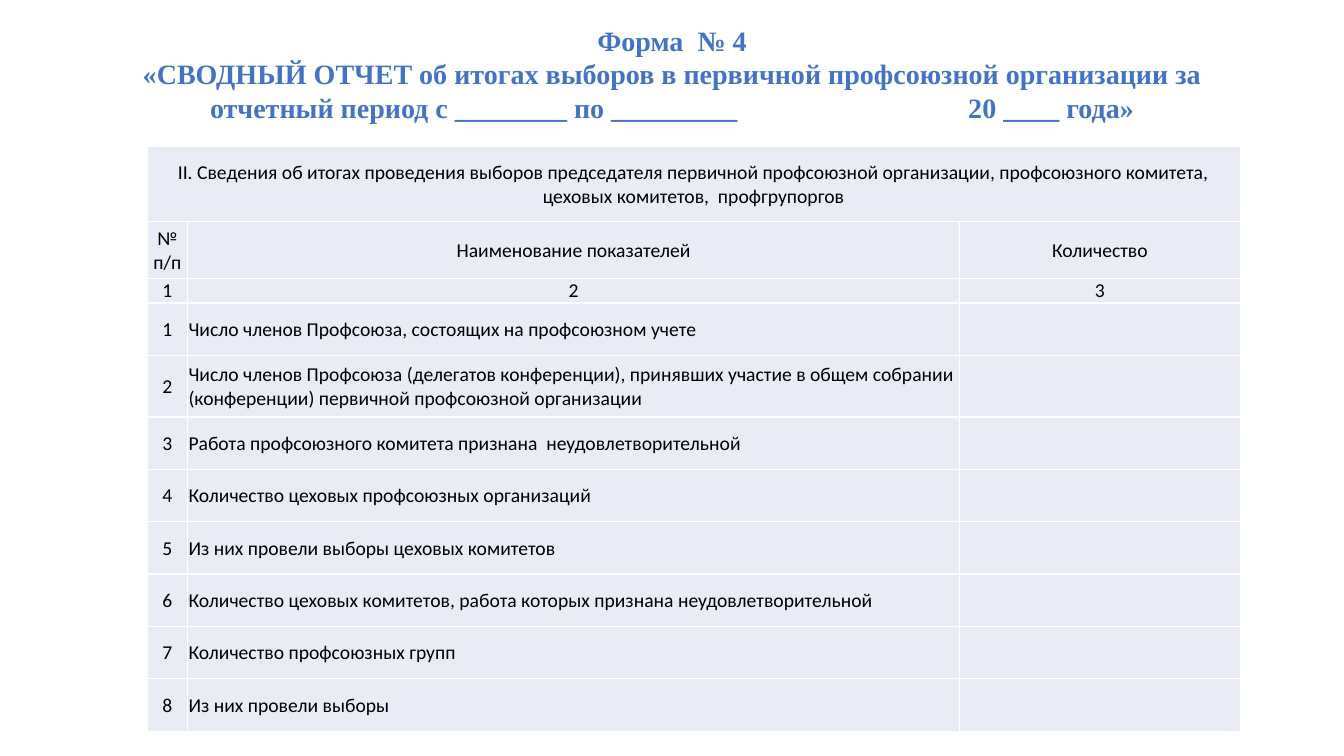
"""Build the slide with form No. 4, the summary report on trade union elections."""
import dataclasses

import lxml.etree
import pptx
import pptx.dml.color
import pptx.enum.text
import pptx.oxml.ns
import pptx.util

TITLE = [
    "Форма  № 4",
    "«СВОДНЫЙ ОТЧЕТ об итогах выборов в первичной профсоюзной организации за "
    "отчетный период с ________ по _________\t20 ____ года»",
]
SECTION = (
    "II. Сведения об итогах проведения выборов председателя первичной профсоюзной "
    "организации, профсоюзного комитета, цеховых комитетов,  профгрупоргов"
)
HEADINGS = ["№ п/п", "Наименование показателей", "Количество"]
INDICATORS = [
    "Число членов Профсоюза, состоящих на профсоюзном учете",
    "Число членов Профсоюза (делегатов конференции), принявших участие в общем "
    "собрании (конференции) первичной профсоюзной организации",
    "Работа профсоюзного комитета признана  неудовлетворительной",
    "Количество цеховых профсоюзных организаций",
    "Из них провели выборы цеховых комитетов",
    "Количество цеховых комитетов, работа которых признана неудовлетворительной",
    "Количество профсоюзных групп",
    "Из них провели выборы",
]

SLIDE_SIZE = (13.33, 7.5)
TITLE_BOX = (1.12, 0.18, 11.09, 1.11)
YEAR_TAB = 7.52
TABLE_ORIGIN = (1.46, 1.45)
COLUMN_WIDTHS = [0.4, 7.66, 2.78]
HEADER_HEIGHTS = [0.75, 0.56, 0.24]
INDICATOR_HEIGHT = 0.52
TWO_LINE_HEIGHT = 0.61
LONG_TEXT = 100
CELL_MARGIN = 0.01


@dataclasses.dataclass(frozen=True)
class Theme:
    title_font: str = "Times New Roman"
    title_size: int = 20
    title_color: str = "4472C4"
    table_font: str = "Calibri"
    table_size: int = 14
    table_color: str = "000000"
    cell_fill: str = "E9EBF5"
    border_color: str = "FFFFFF"
    border_width: int = 1


THEME = Theme()
INCH = pptx.util.Inches
ALIGN = pptx.enum.text.PP_ALIGN
qn = pptx.oxml.ns.qn


def rgb(color):
    return pptx.dml.color.RGBColor.from_string(color)


def style_font(font, name, size, color, bold=False):
    font.name = name
    font.size = pptx.util.Pt(size)
    font.color.rgb = rgb(color)
    font.bold = bold


def add_tab_stop(paragraph, position):
    properties = paragraph._p.get_or_add_pPr()
    tabs = lxml.etree.SubElement(properties, qn("a:tabLst"))
    lxml.etree.SubElement(tabs, qn("a:tab"), pos=str(INCH(position)), algn="l")


def add_title(slide):
    shape = slide.shapes.add_textbox(*map(INCH, TITLE_BOX))
    frame = shape.text_frame
    frame.word_wrap = True
    frame.auto_size = pptx.enum.text.MSO_AUTO_SIZE.SHAPE_TO_FIT_TEXT
    for index, line in enumerate(TITLE):
        paragraph = frame.add_paragraph() if index else frame.paragraphs[0]
        paragraph.alignment = ALIGN.CENTER
        if "\t" in line:
            add_tab_stop(paragraph, YEAR_TAB)
        run = paragraph.add_run()
        run.text = line
        style_font(run.font, THEME.title_font, THEME.title_size, THEME.title_color, True)


def add_borders(cell):
    properties = cell._tc.get_or_add_tcPr()
    for index, side in enumerate(("lnL", "lnR", "lnT", "lnB")):
        line = lxml.etree.Element(qn(f"a:{side}"), w=str(pptx.util.Pt(THEME.border_width)))
        fill = lxml.etree.SubElement(line, qn("a:solidFill"))
        lxml.etree.SubElement(fill, qn("a:srgbClr"), val=THEME.border_color)
        properties.insert(index, line)


def fill_cell(cell, text, alignment):
    cell.fill.solid()
    cell.fill.fore_color.rgb = rgb(THEME.cell_fill)
    add_borders(cell)
    cell.vertical_anchor = pptx.enum.text.MSO_ANCHOR.MIDDLE
    cell.margin_left = cell.margin_right = cell.margin_top = INCH(CELL_MARGIN)
    cell.margin_bottom = 0
    paragraph = cell.text_frame.paragraphs[0]
    paragraph.alignment = alignment
    if text:
        run = paragraph.add_run()
        run.text = text
        style_font(run.font, THEME.table_font, THEME.table_size, THEME.table_color)


def add_report_table(slide):
    header = [[SECTION, "", ""], HEADINGS, ["1", "2", "3"]]
    body = [[str(number), text, ""] for number, text in enumerate(INDICATORS, 1)]
    content = header + body
    heights = HEADER_HEIGHTS + [
        TWO_LINE_HEIGHT if len(text) > LONG_TEXT else INDICATOR_HEIGHT for text in INDICATORS
    ]
    size = (sum(COLUMN_WIDTHS), sum(heights))
    table = slide.shapes.add_table(
        len(content), len(COLUMN_WIDTHS), *map(INCH, TABLE_ORIGIN + size)
    ).table
    table.first_row = table.horz_banding = False
    for column, width in zip(table.columns, COLUMN_WIDTHS):
        column.width = INCH(width)
    for row, height in zip(table.rows, heights):
        row.height = INCH(height)
    table.cell(0, 0).merge(table.cell(0, len(COLUMN_WIDTHS) - 1))
    for row_index, texts in enumerate(content):
        for column_index, text in enumerate(texts):
            is_indicator = row_index >= len(header) and column_index == 1
            alignment = ALIGN.LEFT if is_indicator else ALIGN.CENTER
            fill_cell(table.cell(row_index, column_index), text, alignment)


def main():
    presentation = pptx.Presentation()
    presentation.slide_width, presentation.slide_height = map(INCH, SLIDE_SIZE)
    slide = presentation.slides.add_slide(presentation.slide_layouts[6])
    add_report_table(slide)
    add_title(slide)
    presentation.save("out.pptx")


if __name__ == "__main__":
    main()
